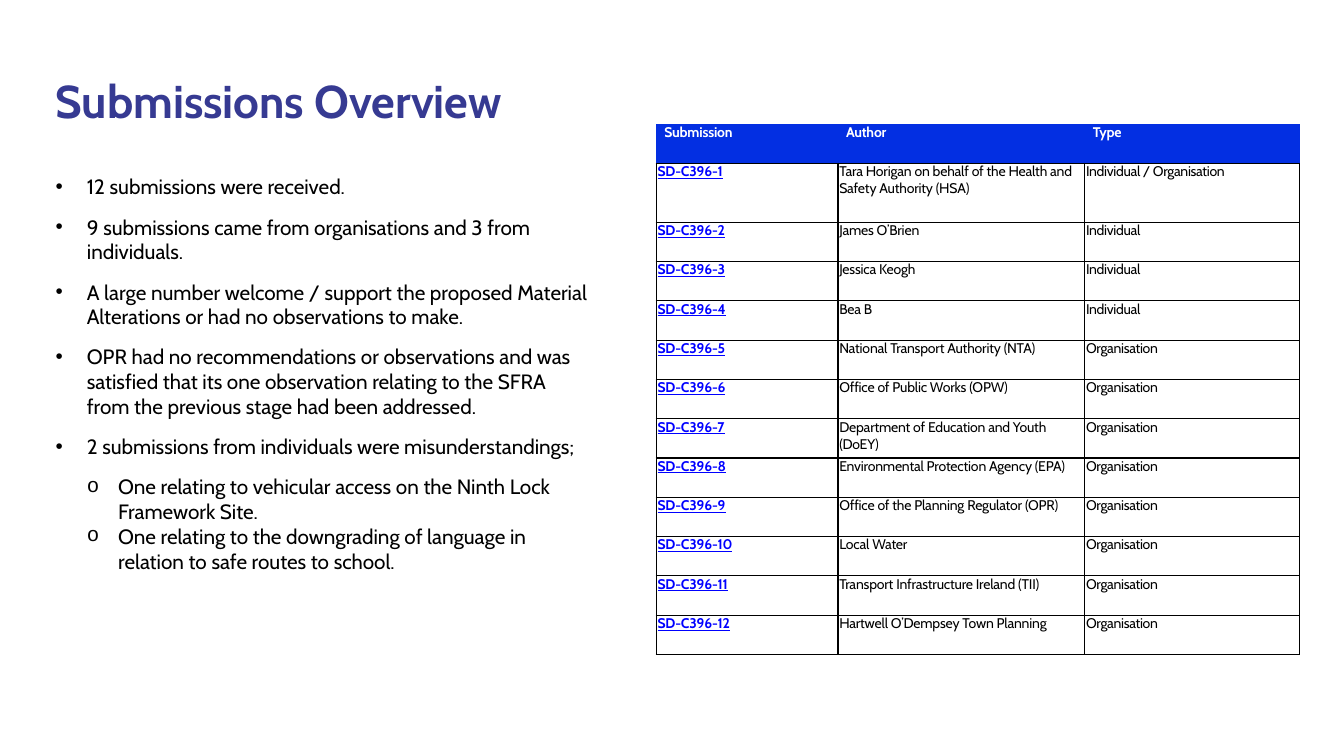
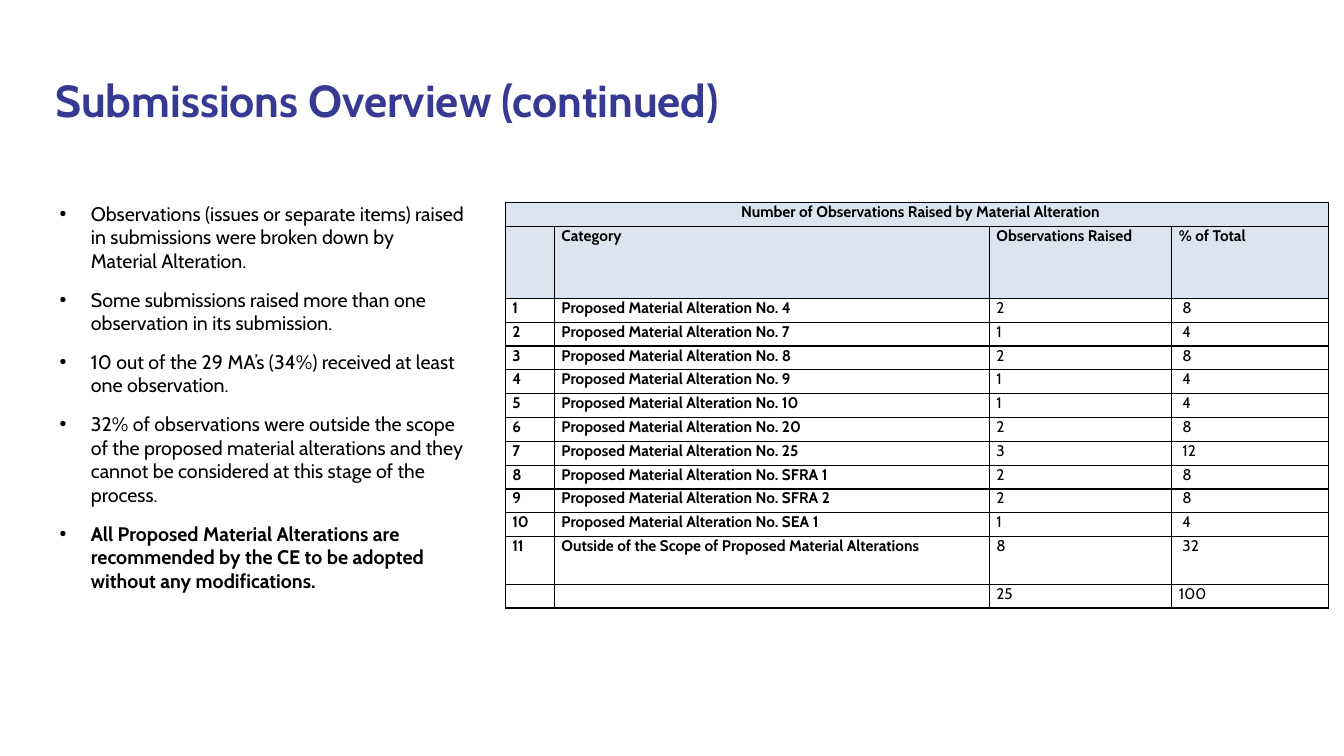
"""Build the two submissions overview slides."""
from dataclasses import dataclass

from lxml import etree
from pptx import Presentation
from pptx import util as u
from pptx.dml.color import RGBColor
from pptx.enum import text
from pptx.oxml import ns


@dataclass(frozen=True)
class Theme:
    """Colours, font and type sizes of the deck."""
    font: str = "Cabin"
    title: str = "363A92"
    ink: str = "000000"
    paper: str = "FFFFFF"
    link: str = "0000FF"
    header: str = "032FE2"
    band: str = "DBE5F1"
    title_size: float = 32.8
    title_small: float = 32
    body_size: float = 14.8
    body_small: float = 14
    register_size: float = 10
    count_size: float = 11
    gap: float = 10.9
    rule: float = 1


T = Theme()
INDENT = 0.79
BULLETS = (("•", "Arial"), ("o", "Courier New"))

RECEIVED = (
    ("12 submissions were received.", 0),
    ("9 submissions came from organisations and 3 from individuals.", 0),
    ("A large number welcome / support the proposed Material Alterations "
     "or had no observations to make.", 0),
    ("OPR had no recommendations or observations and was satisfied that its one "
     "observation relating to the SFRA from the previous stage had been addressed.", 0),
    ("2 submissions from individuals were misunderstandings;", 0),
    ("One relating to vehicular access on the Ninth Lock Framework Site.", 1),
    ("One relating to the downgrading of language in relation to safe routes "
     "to school.", 1),
)
OBSERVED = (
    ("Observations (issues or separate items) raised in submissions were broken "
     "down by Material Alteration.", 0),
    ("Some submissions raised more than one observation in its submission.", 0),
    ("10 out of the 29 MA’s (34%) received at least one observation.", 0),
    ("32% of observations were outside the scope of the proposed material "
     "alterations and they cannot be considered at this stage of the process.", 0),
    ("All Proposed Material Alterations are recommended by the CE to be adopted "
     "without any modifications.", 0),
)
AUTHORS = (
    ("Tara Horigan on behalf of the Health and Safety Authority (HSA)",
     "Individual / Organisation"),
    ("James O’Brien", "Individual"),
    ("Jessica Keogh", "Individual"),
    ("Bea B", "Individual"),
    ("National Transport Authority (NTA)", "Organisation"),
    ("Office of Public Works (OPW)", "Organisation"),
    ("Department of Education and Youth (DoEY)", "Organisation"),
    ("Environmental Protection Agency (EPA)", "Organisation"),
    ("Office of the Planning Regulator (OPR)", "Organisation"),
    ("Local Water", "Organisation"),
    ("Transport Infrastructure Ireland (TII)", "Organisation"),
    ("Hartwell O’Dempsey Town Planning", "Organisation"),
)
ALTERATIONS = (("4", 2), ("7", 1), ("8", 2), ("9", 1), ("10", 1), ("20", 2),
               ("25", 3), ("SFRA 1", 2), ("SFRA 2", 2), ("SEA 1", 1))
OUTSIDE = 8


def style(p, size, color=T.ink, bold=False, underline=False, spacing=0):
    """Format every run of a paragraph."""
    for r in p.runs:
        f = r.font
        f.name, f.size, f.bold = T.font, u.Pt(size), bold
        f.color.rgb = RGBColor.from_string(color)
        if underline:
            f.underline = True
        if spacing:
            r._r.get_or_add_rPr().set("spc", str(spacing))


def place(sp, left, top, width, height):
    """Position a placeholder and clear its insets."""
    sp.left, sp.top, sp.width, sp.height = map(u.Cm, (left, top, width, height))
    tf = sp.text_frame
    tf.margin_left = tf.margin_right = tf.margin_top = tf.margin_bottom = 0
    tf.word_wrap = True
    tf.auto_size = text.MSO_AUTO_SIZE.NONE
    return tf


def add_slide(prs, title, size):
    """Add a slide with its formatted title."""
    s = prs.slides.add_slide(prs.slide_layouts[1])
    tf = place(s.shapes.title, 1.4, 1.32, 20.32, 2.39)
    tf.text = title
    tf.vertical_anchor = text.MSO_ANCHOR.MIDDLE
    p = tf.paragraphs[0]
    p.alignment = text.PP_ALIGN.LEFT
    style(p, size, T.title, True)
    return s


def add_bullets(s, items, box, size, bold_last=False):
    """Fill the body placeholder with a two-level list."""
    tf = place(s.placeholders[1], *box)
    tf.vertical_anchor = text.MSO_ANCHOR.TOP
    for i, (line, level) in enumerate(items):
        p = tf.add_paragraph() if i else tf.paragraphs[0]
        p.text = line
        p.level = level
        char, face = BULLETS[level]
        pPr = p._p.get_or_add_pPr()
        pPr.set("marL", str(u.Cm(INDENT * (level + 1))))
        pPr.set("indent", str(-u.Cm(INDENT)))
        etree.SubElement(pPr, ns.qn("a:buFont"), typeface=face)
        etree.SubElement(pPr, ns.qn("a:buChar"), char=char)
        p.space_before = u.Pt(0)
        p.space_after = u.Pt(0 if level else T.gap)
        style(p, size, bold=bold_last and i == len(items) - 1)


def set_borders(cell, sides):
    """Rule the named sides of a cell and clear the others."""
    tcPr = cell._tc.get_or_add_tcPr()
    for i, side in enumerate("LRTB"):
        ln = etree.Element(ns.qn(f"a:ln{side}"), w=str(u.Pt(T.rule)))
        if side in sides:
            fill = etree.SubElement(ln, ns.qn("a:solidFill"))
            etree.SubElement(fill, ns.qn("a:srgbClr"), val=T.ink)
        else:
            etree.SubElement(ln, ns.qn("a:noFill"))
        tcPr.insert(i, ln)


def set_cell(cell, value, size, fill=T.paper, margin=0.18, sides="LRTB", **font):
    """Write, fill and rule one table cell."""
    cell.margin_left = u.Cm(margin)
    cell.margin_right = cell.margin_top = cell.margin_bottom = 0
    cell.fill.solid()
    cell.fill.fore_color.rgb = RGBColor.from_string(fill)
    set_borders(cell, sides)
    p = cell.text_frame.paragraphs[0]
    if value:
        p.text = value
        style(p, size, **font)
    else:
        etree.SubElement(p._p, ns.qn("a:endParaRPr"), sz=str(size * 100))
    return p


def add_grid(s, left, top, widths, heights):
    """Add a plain table with the given column widths and row heights."""
    frame = s.shapes.add_table(len(heights), len(widths), u.Cm(left), u.Cm(top),
                               u.Cm(sum(widths)), u.Cm(sum(heights)))
    table = frame.table
    table.first_row = table.horz_banding = False
    for column, width in zip(table.columns, widths):
        column.width = u.Cm(width)
    for row, height in zip(table.rows, heights):
        row.height = u.Cm(height)
    return table


def add_register(s):
    """Add the table of submissions and their authors."""
    table = add_grid(s, 16.54, 3.12, (4.58, 6.22, 5.41), [0.99, 1.49] + [0.99] * 11)
    for col, head in enumerate(("Submission", "Author", "Type")):
        set_cell(table.cell(0, col), head, T.register_size, T.header, 0.2, "B",
                 color=T.paper, bold=True, spacing=-10)
    for row, (author, kind) in enumerate(AUTHORS, 1):
        set_cell(table.cell(row, 0), f"SD-C396-{row}", T.register_size, margin=0.03,
                 color=T.link, bold=True, underline=True, spacing=-10)
        for col, value, spacing in ((1, author, -10), (2, kind, -20)):
            set_cell(table.cell(row, col), value, T.register_size, margin=0.03,
                     spacing=spacing)


def add_counts(s):
    """Add the table of observations by material alteration."""
    counts = [(f"Proposed Material Alteration No. {name}", n) for name, n in ALTERATIONS]
    counts.append(("Outside of the Scope of Proposed Material Alterations", OUTSIDE))
    total = sum(n for _, n in counts)
    rows = [("Number of Observations Raised by Material Alteration", "", "", ""),
            ("", "Category", "Observations Raised", "% of Total")]
    rows += [(str(i), name, str(n), str(100 * n // total))
             for i, (name, n) in enumerate(counts, 1)]
    rows.append(("", "", str(total), "100"))
    heights = [0.6, 1.81] + [0.6] * len(ALTERATIONS) + [1.2, 0.6]
    table = add_grid(s, 12.73, 5.11, (1.24, 10.96, 4.6, 3.96), heights)
    for i, row in enumerate(rows):
        head = i < 2
        for j, value in enumerate(row):
            shifted = j == 3 and 2 <= i < len(rows) - 1
            set_cell(table.cell(i, j), value, T.count_size, T.band if head else T.paper,
                     0.27 if shifted else 0.18, bold=head or j < 2)
    banner = table.cell(0, 0)
    banner.merge(table.cell(0, 3))
    banner.text_frame.paragraphs[0].alignment = text.PP_ALIGN.CENTER


def main():
    """Build and save the deck."""
    prs = Presentation()
    prs.slide_width, prs.slide_height = u.Cm(33.87), u.Cm(19.05)
    s = add_slide(prs, "Submissions Overview", T.title_size)
    add_bullets(s, RECEIVED, (1.4, 4.39, 13.54, 11.68), T.body_size)
    add_register(s)
    s = add_slide(prs, "Submissions Overview (continued)", T.title_small)
    add_bullets(s, OBSERVED, (1.5, 5.08, 10.21, 11.68), T.body_small, bold_last=True)
    add_counts(s)
    prs.save("out.pptx")


if __name__ == "__main__":
    main()
